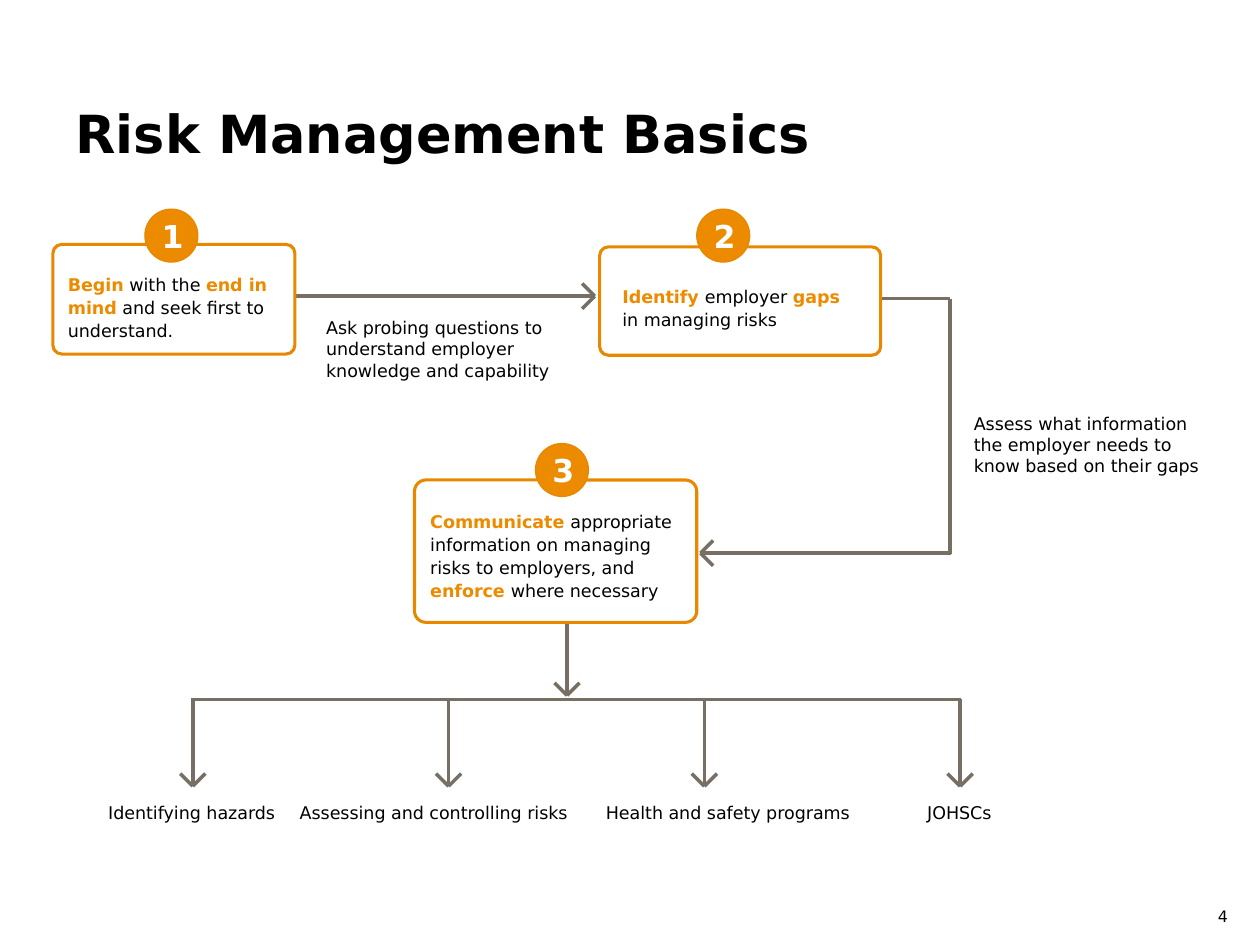
from lxml.etree import SubElement
from pptx import Presentation
from pptx.dml.color import RGBColor
from pptx.enum.shapes import MSO_CONNECTOR, MSO_SHAPE
from pptx.enum.text import MSO_ANCHOR, PP_ALIGN
from pptx.oxml.ns import qn
from pptx.util import Pt

PX = 9144  # 100 px to the inch
FONT = "DejaVu Sans"
ORANGE, BORDER, GREY = "ED8B00", "E88800", "776E64"
BLACK, WHITE = "000000", "FFFFFF"


def px(*lengths):
    return [n * PX for n in lengths]


def color(fmt, value):
    fmt.rgb = RGBColor.from_string(value)


def add_run(p, text, size=10, value=BLACK, bold=False):
    r = p.add_run()
    r.text = text
    r.font.name, r.font.size, r.font.bold = FONT, Pt(size), bold
    color(r.font.color, value)


def set_margins(tf, left, top, right, bottom):
    tf.margin_left, tf.margin_top, tf.margin_right, tf.margin_bottom = px(
        left, top, right, bottom)


def add_label(s, box, text, size=10, align=PP_ALIGN.LEFT, anchor=MSO_ANCHOR.TOP):
    tf = s.shapes.add_textbox(*px(*box)).text_frame
    tf.word_wrap, tf.vertical_anchor = True, anchor
    p = tf.paragraphs[0]
    p.alignment = align
    add_run(p, text, size)


def add_line(s, x1, y1, x2, y2):
    line = s.shapes.add_connector(MSO_CONNECTOR.STRAIGHT, *px(x1, y1, x2, y2))
    color(line.line.color, GREY)
    line.line.width = Pt(2)
    SubElement(line._element.spPr, qn("a:effectLst"))


def add_arrow(s, x1, y1, x2, y2, barb=10):
    """Draw a horizontal or vertical shaft with an open head at its end."""
    add_line(s, x1, y1, x2, y2)
    dx = (x2 > x1) - (x2 < x1)
    dy = (y2 > y1) - (y2 < y1)
    for side in (-barb, barb):
        add_line(s, x2 - dx * barb + dy * side, y2 - dy * barb + dx * side, x2, y2)


def add_filled(s, kind, box, fill, width):
    sp = s.shapes.add_shape(kind, *px(*box))
    sp.shadow.inherit = False
    sp.fill.solid()
    color(sp.fill.fore_color, fill)
    color(sp.line.color, BORDER)
    sp.line.width = Pt(width)
    return sp


def add_step(s, box, number, badge_dx, badge_dy, runs, inset=10, anchor=MSO_ANCHOR.TOP):
    """Draw a card whose numbered badge overlaps its top edge."""
    x, y, w, h = box
    card = add_filled(s, MSO_SHAPE.ROUNDED_RECTANGLE, box, WHITE, 1.75)
    card.adjustments[0] = 0.08
    tf = card.text_frame
    tf.word_wrap, tf.vertical_anchor = True, anchor
    set_margins(tf, inset, 20, inset, 10)
    p = tf.paragraphs[0]
    p.alignment, p.line_spacing = PP_ALIGN.LEFT, 1.1
    for text, strong in runs:
        add_run(p, text, value=ORANGE if strong else BLACK, bold=strong)

    badge = add_filled(s, MSO_SHAPE.OVAL, (x + badge_dx, y - badge_dy, 42, 42), ORANGE, 0.75)
    tf = badge.text_frame
    tf.word_wrap, tf.vertical_anchor = False, MSO_ANCHOR.MIDDLE
    set_margins(tf, 2, 0, 0, 0)
    p = tf.paragraphs[0]
    p.alignment = PP_ALIGN.CENTER
    add_run(p, str(number), 18, WHITE, True)


def add_title(s, box, text):
    title = s.shapes.title
    title.left, title.top, title.width, title.height = px(*box)
    tf = title.text_frame
    tf.vertical_anchor = MSO_ANCHOR.TOP
    p = tf.paragraphs[0]
    p.alignment = PP_ALIGN.LEFT
    add_run(p, text, 30, BLACK, True)


def add_topics(s, box, topics):
    """Draw a bar with evenly spaced arrows, each leading to a topic."""
    x, y, w, h = box
    add_line(s, x - 1, y, x + w + 1, y)
    gap = w / (len(topics) - 1)
    for i, (text, dx, width) in enumerate(topics):
        stem = round(x + i * gap)
        add_arrow(s, stem, y, stem, y + h)
        add_label(s, (stem + dx, y + h + 8, width, 27), text)


def add_flow(s):
    add_arrow(s, 450, 446, 450, 552)
    add_arrow(s, 120, 235, 472, 235)
    add_line(s, 611, 237, 754, 237)
    add_line(s, 754, 237, 754, 440)
    add_arrow(s, 755, 439, 556, 439)
    add_step(s, (42, 194, 192, 87), 1, 73, 28, [
        ("Begin", True), (" with the ", False), ("end in mind", True),
        (" and seek first to understand.", False)])
    add_step(s, (476, 196, 223, 86), 2, 77, 30, [
        ("Identify ", True), ("employer ", False), ("gaps ", True),
        ("in managing risks", False)], 16, MSO_ANCHOR.MIDDLE)
    add_step(s, (329, 381, 224, 113), 3, 96, 29, [
        ("Communicate ", True),
        ("appropriate information on managing risks to employers, and ", False),
        ("enforce ", True), ("where necessary", False)])
    add_label(s, (249, 247, 245, 61),
              "Ask probing questions to understand employer knowledge and capability")
    add_label(s, (763, 323, 205, 61),
              "Assess what information the employer needs to know based on their gaps")


def main():
    prs = Presentation()
    prs.slide_width, prs.slide_height = px(1000, 750)
    s = prs.slides.add_slide(prs.slide_layouts[5])
    add_title(s, (50, 75, 907, 112), "Risk Management Basics")
    add_flow(s)
    add_topics(s, (153, 555, 609, 69), [
        ("Identifying hazards", -77, 245),
        ("Assessing and controlling risks", -128, 239),
        ("Health and safety programs", -88, 232),
        ("JOHSCs", -36, 245)])
    add_label(s, (945, 707, 51, 40), "4", 9, PP_ALIGN.CENTER, MSO_ANCHOR.MIDDLE)
    prs.save("out.pptx")


if __name__ == "__main__":
    main()
